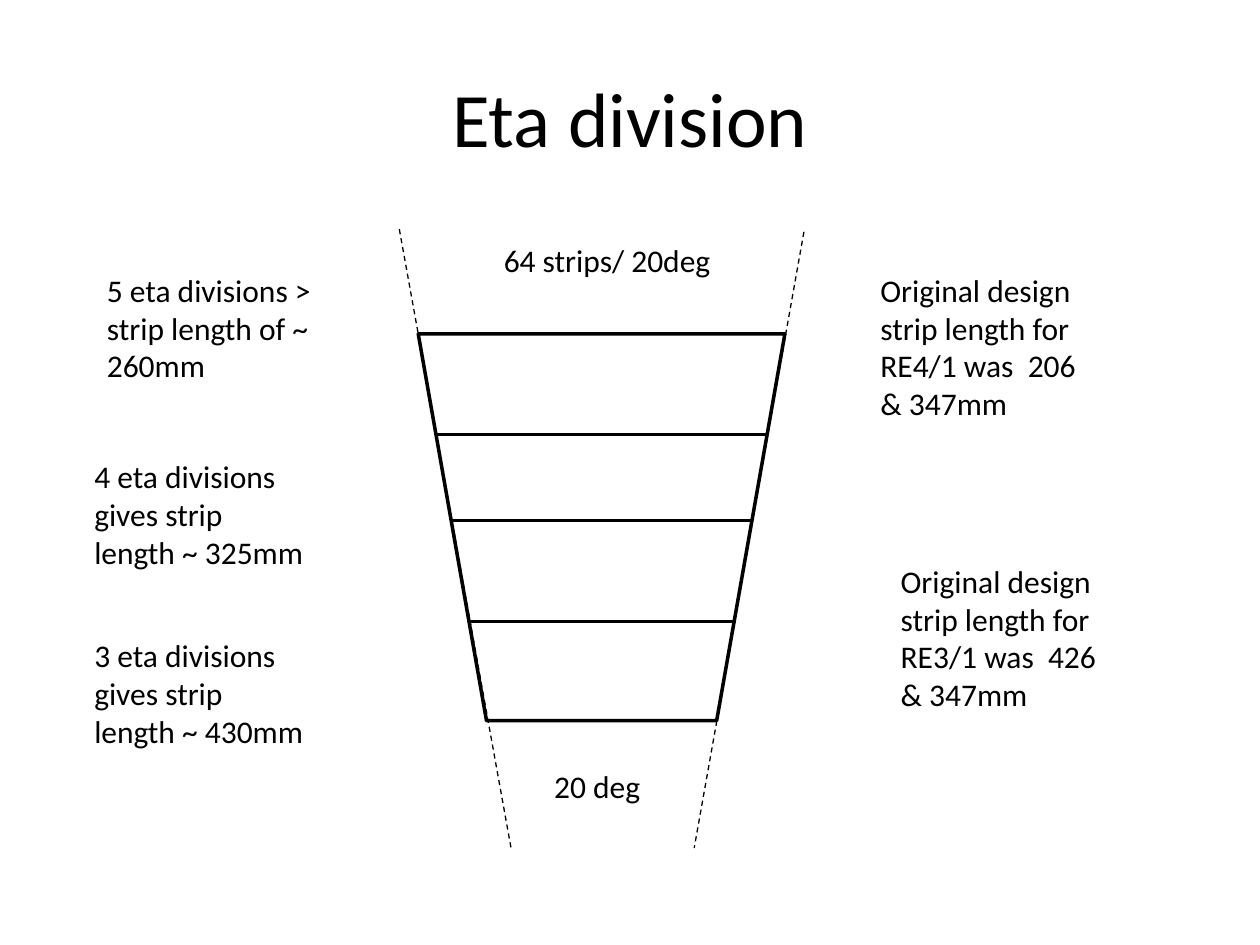
import pptx
import pptx.util
import pptx.dml.color
import pptx.enum.dml
import pptx.enum.shapes
import pptx.enum.text
import lxml.etree

Pt = pptx.util.Pt


def paint(form, color):
    form.rgb = pptx.dml.color.RGBColor.from_string(color)


def rule(x1, y1, x2, y2, width):
    line = slide.shapes.add_connector(
        pptx.enum.shapes.MSO_CONNECTOR.STRAIGHT, Pt(x1), Pt(y1), Pt(x2), Pt(y2))
    paint(line.line.color, "000000")
    line.line.width = Pt(width)
    props = line._element.spPr
    lxml.etree.SubElement(props, pptx.oxml.ns.qn("a:effectLst"))
    return line


deck = pptx.Presentation()
deck.slide_width, deck.slide_height = Pt(720), Pt(540)
slide = deck.slides.add_slide(deck.slide_layouts[5])

# Title
title = slide.shapes.title
title.left, title.top, title.width, title.height = Pt(36), Pt(21.6), Pt(648), Pt(90)
title.text_frame.text = "Eta division"
title.text_frame.vertical_anchor = pptx.enum.text.MSO_ANCHOR.MIDDLE
para = title.text_frame.paragraphs[0]
para.alignment = pptx.enum.text.PP_ALIGN.CENTER
para.font.size = Pt(44)
para.font.name = "Calibri"
paint(para.font.color, "000000")

# Chamber outline, wide side up
left, top, width, height = 239, 190.8, 209.5, 221
inset = 39
wedge = slide.shapes.add_shape(
    pptx.enum.shapes.MSO_SHAPE.TRAPEZOID, Pt(left), Pt(top), Pt(width), Pt(height))
wedge.adjustments[0] = inset / width
wedge.rotation = 180
wedge.shadow.inherit = False
wedge.fill.background()
paint(wedge.line.color, "000000")
wedge.line.width = Pt(2)

# Eta dividers, running from side to side
for y in (248.4, 297.4, 355):
    gap = inset * (y - top) / height
    rule(left + gap, y, left + width - gap, y, 1.75)

# Dashed sector edges
for ends in ((228.2, 131, 292.3, 486), (459.4, 132.5, 396.7, 484.6)):
    edge = rule(*ends, 0.75)
    edge.line.dash_style = pptx.enum.dml.MSO_LINE.DASH

# Notes and labels: left, top, width, height, text
notes = [
    (46.8, 257.8, 136, 72.7, "4 eta divisions gives strip length ~ 325mm"),
    (54, 151.2, 136, 72.7, "5 eta divisions > strip length of ~ 260mm"),
    (46.8, 360, 136, 72.7, "3 eta divisions gives strip length ~ 430mm"),
    (309.6, 434.9, 73.4, 29, "20 deg"),
    (496, 151.2, 136, 94.5, "Original design strip length for RE4/1 was  206 & 347mm"),
    (507.6, 317.5, 136, 94.5, "Original design strip length for RE3/1 was  426 & 347mm"),
    (280.8, 134, 136, 29, "64 strips/ 20deg"),
]
for x, y, w, h, words in notes:
    frame = slide.shapes.add_textbox(Pt(x), Pt(y), Pt(w), Pt(h)).text_frame
    frame.word_wrap = True
    frame.auto_size = pptx.enum.text.MSO_AUTO_SIZE.SHAPE_TO_FIT_TEXT
    frame.text = words
    font = frame.paragraphs[0].runs[0].font
    font.size = Pt(18)
    font.name = "Calibri"
    paint(font.color, "000000")

deck.save("out.pptx")
